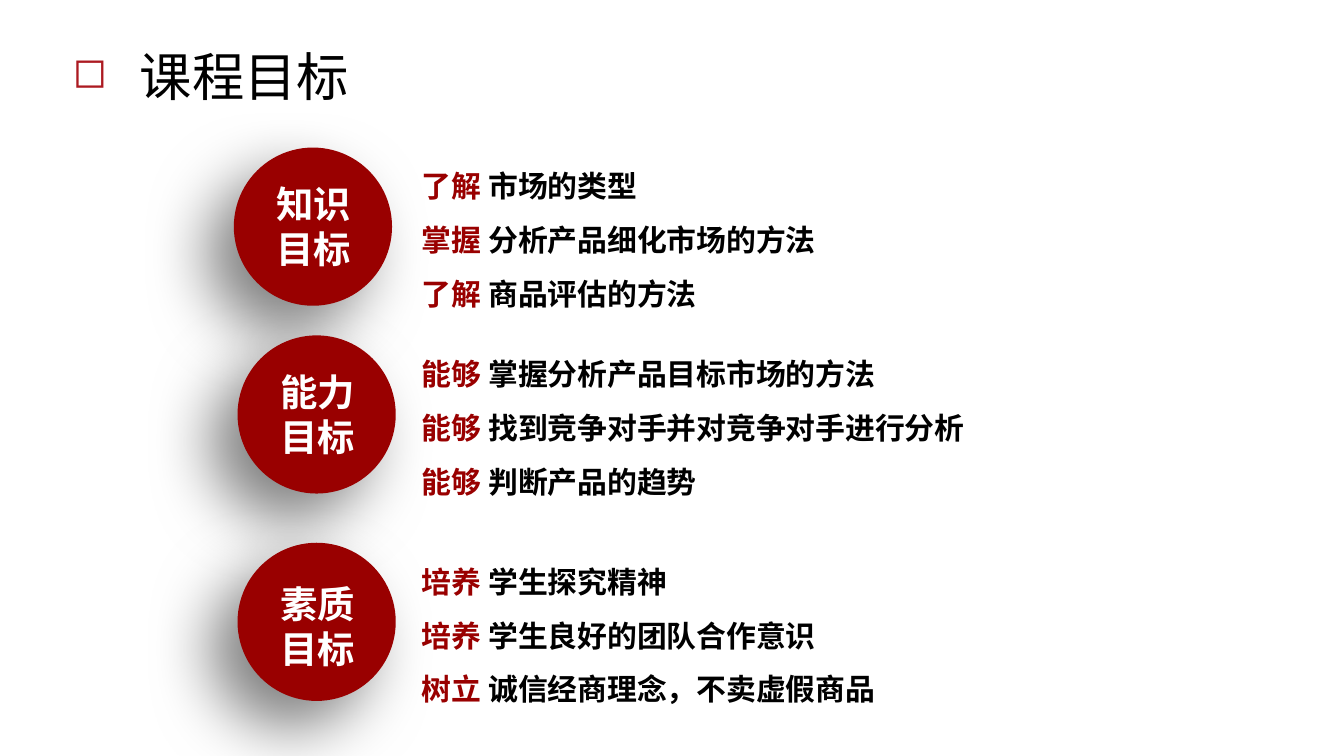
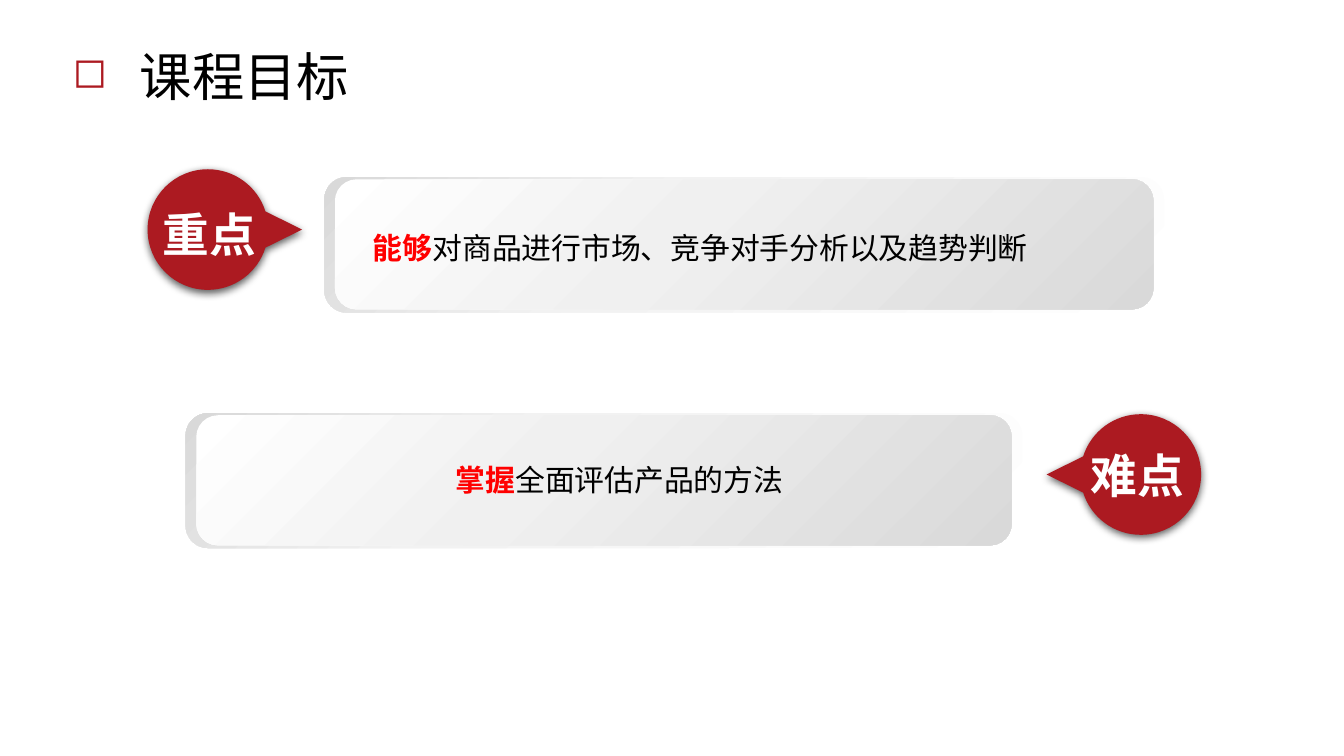
import dataclasses
import math

import pptx
import pptx.dml.color
import pptx.enum.shapes
import pptx.enum.text
import pptx.oxml
import pptx.oxml.ns
import pptx.util

Cm = pptx.util.Cm
Pt = pptx.util.Pt
qn = pptx.oxml.ns.qn
SHAPE = pptx.enum.shapes.MSO_SHAPE
ALIGN = pptx.enum.text.PP_ALIGN


@dataclasses.dataclass(frozen=True)
class Theme:
    """Fonts, type sizes, colours, gradients and shadows of the deck."""
    font: str = "Noto Sans CJK SC"
    head: int = 28
    tag: int = 25
    disc: int = 20
    body: int = 16
    ink: str = "000000"
    white: str = "FFFFFF"
    wine: str = "990000"
    brick: str = "AC1A21"
    red: str = "FF0000"
    rim: tuple = ((0, "FFFFFF"), (0, "FFFFFF"), (62, "F2F2F2"), (100, "D9D9D9"))
    face: tuple = ((0, "FFFFFF"), (0, "FFFFFF"), (42, "F0F0F0"), (100, "D9D9D9"))
    deep: tuple = (50, 35, 20, 135)
    soft: tuple = (63, 4.5, 1.5, 90)


def node(tag, inner="", **attrs):
    """Return a drawing element with the given attributes and inner XML."""
    pairs = "".join(f' {key}="{val}"' for key, val in attrs.items())
    space = pptx.oxml.ns.nsdecls("a")
    return pptx.oxml.parse_xml(f"<a:{tag} {space}{pairs}>{inner}</a:{tag}>")


def tint(code, inner=""):
    """Return the XML of one colour."""
    return f'<a:srgbClr val="{code}">{inner}</a:srgbClr>'


def arc(start, end):
    """Return the two handles and the end of a unit arc given in degrees."""
    a, b = math.radians(start), math.radians(end)
    k = 4 / 3 * math.tan((b - a) / 4)
    return [(math.cos(a) - k * math.sin(a), math.sin(a) + k * math.cos(a)),
            (math.cos(b) + k * math.sin(b), math.sin(b) - k * math.cos(b)),
            (math.cos(b), math.sin(b))]


class Deck:
    """Holds the style and the current slide, and draws each kind of element."""

    def __init__(self, theme):
        """Open an empty deck."""
        self.theme = theme
        self.prs = pptx.Presentation()
        self.prs.slide_width, self.prs.slide_height = Cm(25.4), Cm(14.29)

    def start(self, layout, title):
        """Add a slide with its bulleted title."""
        self.slide = self.prs.slides.add_slide(self.prs.slide_layouts[layout])
        hold = list(self.slide.placeholders)
        self.slots = hold[1:]
        frame = self.frame(hold[0], (1.12, 0.71, 15.14, 1.45))
        para = frame.paragraphs[0]
        para.text = title
        para.alignment = ALIGN.LEFT
        props = para._p.get_or_add_pPr()
        props.set("marL", str(Cm(1.27)))
        props.set("indent", str(-Cm(1.27)))
        props.append(node("buClr", tint(self.theme.brick)))
        props.append(node("buSzPct", val=80000))
        props.append(node("buChar", char="◻"))
        self.style(para.runs[0], self.theme.head, self.theme.ink, False)

    def finish(self):
        """Remove the placeholders left empty."""
        for slot in self.slots:
            slot._element.getparent().remove(slot._element)

    def frame(self, shape, box):
        """Place a text shape and return its frame."""
        shape.left, shape.top, shape.width, shape.height = map(Cm, box)
        frame = shape.text_frame
        frame.word_wrap = True
        frame.auto_size = pptx.enum.text.MSO_AUTO_SIZE.SHAPE_TO_FIT_TEXT
        frame.vertical_anchor = pptx.enum.text.MSO_ANCHOR.TOP
        return frame

    def style(self, run, size, color, bold=True):
        """Set the type of a run."""
        font = run.font
        font.size, font.bold, font.name = Pt(size), bold, self.theme.font
        font.color.rgb = pptx.dml.color.RGBColor.from_string(color)
        run._r.get_or_add_rPr().append(node("ea", typeface=self.theme.font))

    def pair(self, para, words, color, bold):
        """Write a coloured key word and the plain text after it."""
        para.text = words[0]
        para.add_run().text = words[1]
        self.style(para.runs[0], self.theme.body, color)
        self.style(para.runs[1], self.theme.body, self.theme.ink, bold)

    def goals(self, box, items):
        """Fill the next body placeholder with a list of goals."""
        frame = self.frame(self.slots.pop(0), box)
        for i, (verb, rest) in enumerate(items):
            para = frame.add_paragraph() if i else frame.paragraphs[0]
            props = para._p.get_or_add_pPr()
            props.set("marL", "0")
            props.set("indent", "0")
            props.append(node("buNone"))
            para.line_spacing, para.space_before = 1.5, Pt(0)
            self.pair(para, (verb + " ", rest), color=self.theme.wine, bold=True)

    def bare(self, box):
        """Add a text box without insets and return its frame."""
        frame = self.frame(self.slide.shapes.add_textbox(0, 0, 0, 0), box)
        frame.margin_left = frame.margin_right = 0
        frame.margin_top = frame.margin_bottom = 0
        return frame

    def label(self, box, text, size):
        """Add a centred white label."""
        frame = self.bare(box)
        frame.text = text
        for para in frame.paragraphs:
            para.alignment = ALIGN.CENTER
            self.style(para.runs[0], size, self.theme.white)

    def point(self, box, words, align):
        """Add the sentence of a bar."""
        para = self.bare(box).paragraphs[0]
        para.alignment, para.line_spacing = align, 1.2
        self.pair(para, words, color=self.theme.red, bold=False)

    def paint(self, shape, color, shade):
        """Give a shape a plain fill and a shadow."""
        shape.fill.solid()
        shape.fill.fore_color.rgb = pptx.dml.color.RGBColor.from_string(color)
        shape.line.fill.background()
        shape.shadow.inherit = False
        alpha, blur, dist, turn = shade
        dark = tint(self.theme.ink, f'<a:alpha val="{alpha * 1000}"/>')
        cast = node("outerShdw", dark, blurRad=Pt(blur), dist=Pt(dist),
                    dir=turn * 60000, algn="ctr", rotWithShape=0)
        shape._element.spPr.find(qn("a:effectLst")).append(cast)

    def disc(self, left, top, size):
        """Add a round badge."""
        shape = self.slide.shapes.add_shape(
            SHAPE.OVAL, Cm(left), Cm(top), Cm(size), Cm(size))
        self.paint(shape, self.theme.wine, self.theme.deep)

    def drop(self, mid, top, side):
        """Add a round tag whose tip points to one side."""
        rad, reach, half = 1.14, 1.78, 17.5
        turns = (half, 90, 180, 270, 360 - half)
        rim = [arc(half, half)[2]]
        for start, end in zip(turns, turns[1:]):
            rim += arc(start, end)
        pen = self.slide.shapes.build_freeform(Cm(mid + side * reach), Cm(top))
        pen.add_line_segments([(Cm(mid + side * rad * x), Cm(top + rad * y))
                               for x, y in rim], close=True)
        shape = pen.convert_to_shape()
        lines = list(shape._element.spPr.iter(qn("a:lnTo")))[1:]
        for i in range(0, len(lines), 3):
            curve = node("cubicBezTo")
            lines[i].addprevious(curve)
            for line in lines[i:i + 3]:
                curve.append(line[0])
                line.getparent().remove(line)
        self.paint(shape, self.theme.brick, self.theme.soft)

    def slab(self, box, stops, angle):
        """Add a rounded box with a gradient."""
        shape = self.slide.shapes.add_shape(
            SHAPE.ROUNDED_RECTANGLE, *map(Cm, box))
        shape.fill.gradient()
        shape.fill.gradient_angle = angle
        chain = shape._element.spPr.find(".//" + qn("a:gsLst"))
        for stop in list(chain):
            chain.remove(stop)
        for pos, code in stops:
            chain.append(node("gs", tint(code), pos=pos * 1000))
        shape.line.fill.background()
        shape.shadow.inherit = False

    def bar(self, left, top, width, height):
        """Add a raised bar made of a rim and a face."""
        self.slab((left, top, width, height), self.theme.rim, 135)
        face = (left + 0.2, top + 0.04, width - 0.4, 2.46)
        self.slab(face, self.theme.face, 315)


GOALS = (
    ("知识", 4.42, 2.79, 3.43, 2.71, 16.59,
     (("了解", "市场的类型"),
      ("掌握", "分析产品细化市场的方法"),
      ("了解", "商品评估的方法"))),
    ("能力", 4.49, 6.34, 6.98, 6.26, 14.02,
     (("能够", "掌握分析产品目标市场的方法"),
      ("能够", "找到竞争对手并对竞争对手进行分析"),
      ("能够", "判断产品的趋势"))),
    ("素质", 4.49, 10.26, 10.99, 10.19, 14.02,
     (("培养", "学生探究精神"),
      ("培养", "学生良好的团队合作意识"),
      ("树立", "诚信经商理念，不卖虚假商品"))),
)

POINTS = (
    ("重点", (3.93, 4.34, 1), (3.04, 3.89, 1.83, 2.13),
     (6.13, 3.35, 15.87, 2.56), (7.05, 4.2, 14.02, 0.81),
     ("能够", "对商品进行市场、竞争对手分析以及趋势判断"), ALIGN.LEFT),
    ("难点", (21.56, 8.97, -1), (20.58, 8.45, 1.83, 1.07),
     (3.51, 7.81, 15.81, 2.55), (4.41, 8.59, 14.6, 0.81),
     ("掌握", "全面评估产品的方法"), ALIGN.CENTER),
)


def main():
    """Build and save both slides."""
    deck = Deck(Theme())
    title = "课程目标"

    deck.start(4, title)
    for kind, left, top, mark, row, width, items in GOALS:
        deck.goals((7.72, row, width, 3.33), items)
        deck.disc(left, top, 2.99)
        deck.label((left + 0.14, mark, 2.74, 1.7),
                   kind + "\n目标", deck.theme.disc)
    deck.finish()

    deck.start(5, title)
    for name, drop, tag, bar, line, words, align in POINTS:
        deck.bar(*bar)
        deck.point(line, words, align)
        deck.drop(*drop)
        deck.label(tag, name, deck.theme.tag)
    deck.finish()

    deck.prs.save("out.pptx")


if __name__ == "__main__":
    main()
